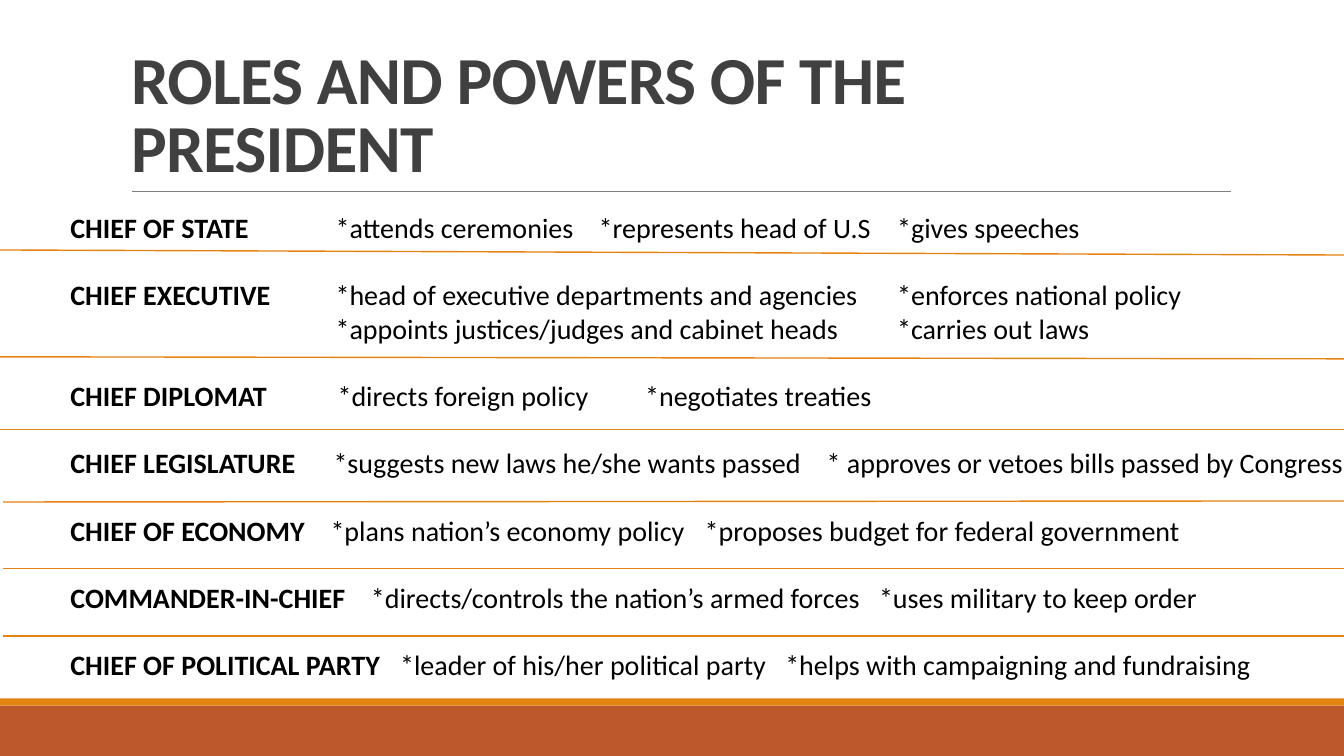
from dataclasses import dataclass

from lxml import etree
from pptx import Presentation
from pptx.dml.color import RGBColor
from pptx.enum.shapes import MSO_CONNECTOR, MSO_SHAPE
from pptx.enum.text import MSO_ANCHOR, MSO_AUTO_SIZE, PP_ALIGN
from pptx.oxml.ns import qn
from pptx.util import Inches, Pt

STRAIGHT = MSO_CONNECTOR.STRAIGHT
RECT = MSO_SHAPE.RECTANGLE
LEFT = PP_ALIGN.LEFT
TOP, BOTTOM = MSO_ANCHOR.TOP, MSO_ANCHOR.BOTTOM
NO_FIT = MSO_AUTO_SIZE.NONE


@dataclass(frozen=True)
class Theme:
    font: str = "Calibri"
    title_size: int = 48
    body_size: int = 20
    title: str = "404040"
    text: str = "000000"
    accent: str = "E48312"
    footer: str = "BD582C"
    rule: str = "808080"


THEME = Theme()
WIDTH, HEIGHT = 13.33, 7.5

# Role, then (tab position in inches, power) pairs
ROLES = [
    ("CHIEF OF STATE", [(2.63, "*attends ceremonies"),
                        (5.24, "*represents head of U.S"),
                        (8.2, "*gives speeches")]),
    ("CHIEF EXECUTIVE", [(2.63, "*head of executive departments and agencies"),
                         (8.2, "*enforces national policy")]),
    ("", [(2.63, "*appoints justices/judges and cabinet heads"),
          (8.2, "*carries out laws")]),
    ("CHIEF DIPLOMAT", [(2.65, "*directs foreign policy"),
                        (5.7, "*negotiates treaties")]),
    ("CHIEF LEGISLATURE", [(2.61, "*suggests new laws he/she wants passed"),
                           (7.5, "* approves or vetoes bills passed by Congress")]),
    ("CHIEF OF ECONOMY", [(2.58, "*plans nation’s economy policy"),
                          (6.29, "*proposes budget for federal government")]),
    ("COMMANDER-IN-CHIEF", [(2.98, "*directs/controls the nation’s armed forces"),
                            (8.02, "*uses military to keep order")]),
    ("CHIEF OF POLITICAL PARTY", [(3.27, "*leader of his/her political party"),
                                  (7.09, "*helps with campaigning and fundraising")]),
]

# Left end, start height and end height of each line between roles
DIVIDERS = [(0, 2.48, 2.53), (0, 3.54, 3.56), (0, 4.26, 4.26),
            (0.03, 4.98, 4.97), (0.03, 5.64, 5.64), (0.03, 6.31, 6.31)]


def set_attrs(target, **values):
    for name, value in values.items():
        setattr(target, name, value)


def add_run(p, text, size, color, bold):
    r = p.add_run()
    r.text = text
    set_attrs(r.font, name=THEME.font, size=Pt(size), bold=bold)
    r.font.color.rgb = RGBColor.from_string(color)
    return r


def add_bar(s, top, height, color):
    sp = s.shapes.add_shape(RECT, 0, Inches(top), Inches(WIDTH), Inches(height))
    sp.shadow.inherit = False
    sp.fill.solid()
    sp.fill.fore_color.rgb = RGBColor.from_string(color)
    sp.line.fill.background()


def add_line(s, x1, y1, x2, y2, color, width):
    line = s.shapes.add_connector(STRAIGHT, Inches(x1), Inches(y1),
                                  Inches(x2), Inches(y2))
    line.line.color.rgb = RGBColor.from_string(color)
    line.line.width = Pt(width)
    etree.SubElement(line._element.spPr, qn("a:effectLst"))


def fill_title(sp):
    set_attrs(sp, left=Inches(1.2), top=Inches(0.31),
              width=Inches(11), height=Inches(1.59))
    tf = sp.text_frame
    set_attrs(tf, word_wrap=True, auto_size=NO_FIT, vertical_anchor=BOTTOM)
    p = tf.paragraphs[0]
    set_attrs(p, alignment=LEFT, line_spacing=0.85)
    r = add_run(p, "ROLES AND POWERS OF THE PRESIDENT",
                THEME.title_size, THEME.title, True)
    r.font._element.set("spc", "-50")


def set_tabs(p, stops):
    tabs = etree.SubElement(p._p.get_or_add_pPr(), qn("a:tabLst"))
    for stop in stops:
        etree.SubElement(tabs, qn("a:tab"), pos=str(Inches(stop)), algn="l")


def add_roles(s):
    # A text box has no list indent, which would override the tab stops
    sp = s.shapes.add_textbox(Inches(0.6), Inches(2.04),
                              Inches(12.97), Inches(5.12))
    tf = sp.text_frame
    set_attrs(tf, word_wrap=True, auto_size=NO_FIT, vertical_anchor=TOP)
    for i, (role, powers) in enumerate(ROLES):
        p = tf.add_paragraph() if i else tf.paragraphs[0]
        gap = 24 if i and role else 0
        set_attrs(p, alignment=LEFT, line_spacing=1.0,
                  space_before=Pt(gap), space_after=Pt(0))
        set_tabs(p, [stop for stop, _ in powers])
        if role:
            add_run(p, role, THEME.body_size, THEME.text, True)
        for _, power in powers:
            add_run(p, "\t" + power, THEME.body_size, THEME.text, False)


def main():
    prs = Presentation()
    set_attrs(prs, slide_width=Inches(WIDTH), slide_height=Inches(HEIGHT))
    s = prs.slides.add_slide(prs.slide_layouts[5])

    # Footer bars and title rule
    add_bar(s, 7, 0.5, THEME.footer)
    add_bar(s, 6.93, 0.07, THEME.accent)
    add_line(s, 1.31, 1.9, 12.21, 1.9, THEME.rule, 0.5)

    # Title and roles
    fill_title(s.shapes.title)
    add_roles(s)

    # Lines between roles
    for left, start, end in DIVIDERS:
        add_line(s, left, start, left + WIDTH, end, THEME.accent, 1)

    prs.save("out.pptx")


if __name__ == "__main__":
    main()
